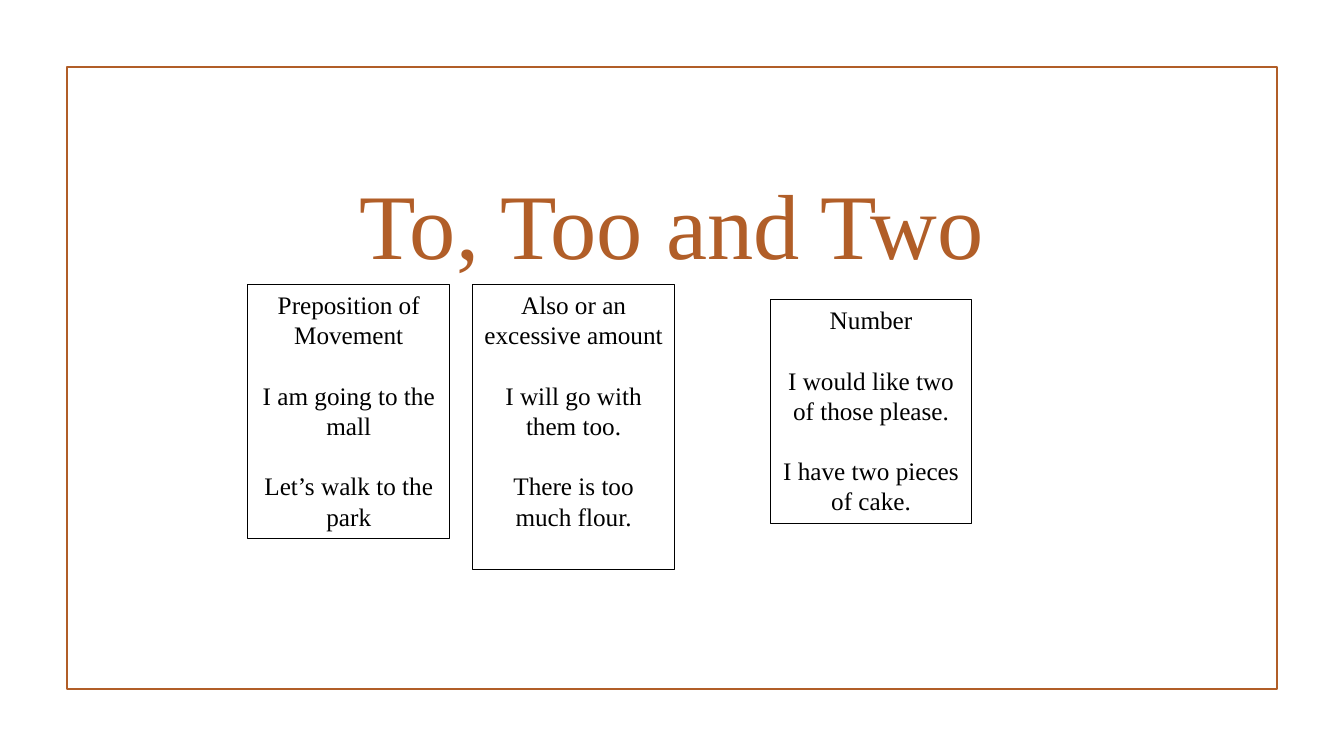
"""Build the slide that explains to, too and two."""
from dataclasses import dataclass

from pptx import Presentation
from pptx.dml.color import RGBColor
from pptx.enum.shapes import MSO_SHAPE as Preset
from pptx.enum.text import MSO_ANCHOR as Anchor, PP_ALIGN as Align
from pptx.util import Inches, Pt

SLIDE_WIDTH, SLIDE_HEIGHT = Inches(13.33), Inches(7.5)
RUST, BLACK = "B15E28", "000000"
FONT = "Times New Roman"
LINE_PITCH = 1.2


@dataclass(frozen=True)
class Area:
    """A rectangle in percent of the slide's width and height."""
    left: float
    top: float
    width: float
    height: float

    def lengths(self) -> tuple[int, ...]:
        """Return left, top, width and height as slide lengths."""
        shares = (self.left, self.top, self.width, self.height)
        sides = (SLIDE_WIDTH, SLIDE_HEIGHT) * 2
        return tuple(round(side * share / 100) for side, share in zip(sides, shares))


@dataclass(frozen=True)
class WordCard:
    """The meaning of one word with two example sentences."""
    area: Area
    meaning: str
    examples: tuple[str, str]


CARD_WIDTH = 15
CARDS = (
    WordCard(Area(35.18, 37.6, CARD_WIDTH, 37.73), "Also or an excessive amount",
             ("I will go with them too.", "There is too much flour.")),
    WordCard(Area(18.45, 37.6, CARD_WIDTH, 33.6), "Preposition of Movement",
             ("I am going to the mall", "Let’s walk to the park")),
    WordCard(Area(57.31, 39.6, CARD_WIDTH, 29.6), "Number",
             ("I would like two of those please.", "I have two pieces of cake.")),
)


def color(value: str) -> RGBColor:
    """Turn a hex string into a colour."""
    return RGBColor.from_string(value)


def apply(target, formats: dict) -> None:
    """Set each named attribute on the target."""
    for name, value in formats.items():
        setattr(target, name, value)


def write(frame, lines: tuple[str, ...], size: int, ink: str, wrap: bool) -> None:
    """Fill a text frame with centred lines, one empty line's height apart."""
    apply(frame, {"word_wrap": wrap, "vertical_anchor": Anchor.TOP})
    pitch = Pt(size * LINE_PITCH)
    for index, line in enumerate(lines):
        paragraph = frame.add_paragraph() if index else frame.paragraphs[0]
        apply(paragraph, {"text": line, "alignment": Align.CENTER,
                          "line_spacing": pitch,
                          "space_before": pitch if index else Pt(0)})
        apply(paragraph.font, {"name": FONT, "size": Pt(size)})
        paragraph.font.color.rgb = color(ink)


def add_outline(slide, area: Area, ink: str, weight: float):
    """Draw an unfilled rectangle."""
    outline = slide.shapes.add_shape(Preset.RECTANGLE, *area.lengths())
    outline.shadow.inherit = False
    outline.fill.background()
    outline.line.color.rgb = color(ink)
    outline.line.width = Pt(weight)
    return outline


def main() -> None:
    """Build and save the slide."""
    deck = Presentation()
    apply(deck, {"slide_width": SLIDE_WIDTH, "slide_height": SLIDE_HEIGHT})
    slide = deck.slides.add_slide(deck.slide_layouts[6])

    add_outline(slide, Area(5, 8.9, 90, 82.3), RUST, 1.25)
    title = slide.shapes.add_textbox(*Area(25.28, 21.47, 49.44, 16.13).lengths())
    write(title.text_frame, ("To, Too and Two",), 66, RUST, wrap=False)
    for card in CARDS:
        box = add_outline(slide, card.area, BLACK, 0.75)
        write(box.text_frame, (card.meaning, *card.examples), 18, BLACK, wrap=True)

    deck.save("out.pptx")


if __name__ == "__main__":
    main()
